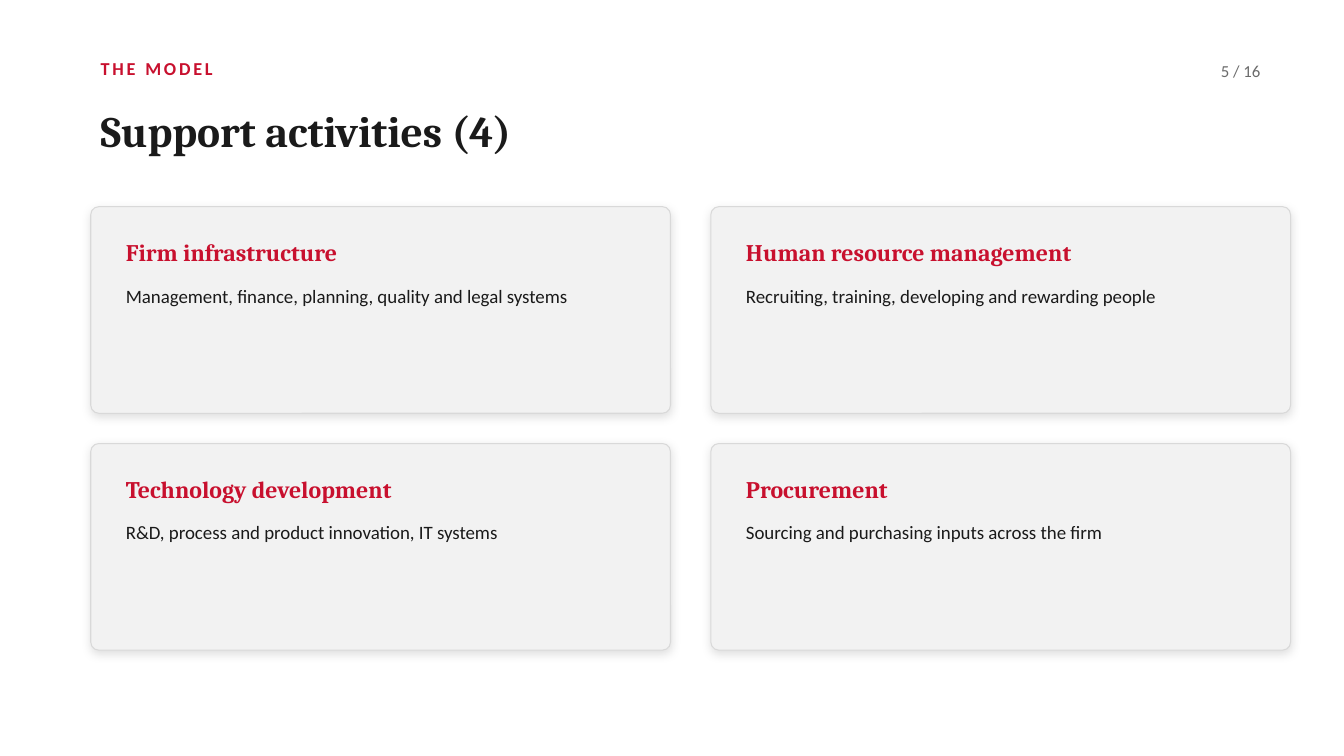
from lxml import etree
from pptx import Presentation
from pptx.dml.color import RGBColor
from pptx.enum.shapes import MSO_SHAPE
from pptx.enum.text import MSO_ANCHOR, PP_ALIGN
from pptx.oxml.ns import qn
from pptx.util import Inches, Pt

ROUNDED = MSO_SHAPE.ROUNDED_RECTANGLE
TOP, MIDDLE = MSO_ANCHOR.TOP, MSO_ANCHOR.MIDDLE
LEFT, RIGHT = PP_ALIGN.LEFT, PP_ALIGN.RIGHT

COLORS = {
    "paper": "FFFFFF",
    "accent": "C8102E",
    "ink": "1A1A1A",
    "muted": "6B6B6B",
    "card": "F2F2F2",
    "border": "D9D9D9",
    "shadow": "000000",
}
HEADING_FONT, BODY_FONT = "Cambria", "Calibri"

MARGIN, CARDS_TOP = 0.9, 2.05
CARD_WIDTH, CARD_HEIGHT = 5.75, 2.05
COLUMN_GAP, ROW_GAP = 0.4, 0.3
PADDING = 0.25

ACTIVITIES = [
    ("Firm infrastructure", "Management, finance, planning, quality and legal systems"),
    ("Human resource management", "Recruiting, training, developing and rewarding people"),
    ("Technology development", "R&D, process and product innovation, IT systems"),
    ("Procurement", "Sourcing and purchasing inputs across the firm"),
]


def rgb(name):
    return RGBColor.from_string(COLORS[name])


class SlideBuilder:
    """Holds the current slide and draws its elements in the deck style."""

    def __init__(self, slide):
        self.slide = slide
        background = slide.background.fill
        background.solid()
        background.fore_color.rgb = rgb("paper")

    def text(self, wording, left, top, width, height, size, color="ink",
             font=BODY_FONT, bold=False, anchor=MIDDLE, align=LEFT, spacing=0):
        """Add a text box; spacing is the letter spacing in points."""
        box = self.slide.shapes.add_textbox(
            Inches(left), Inches(top), Inches(width), Inches(height))
        frame = box.text_frame
        frame.word_wrap = True
        frame.vertical_anchor = anchor
        frame.text = wording
        paragraph = frame.paragraphs[0]
        paragraph.alignment = align
        run = paragraph.runs[0]
        run.font.name = font
        run.font.size = Pt(size)
        run.font.bold = bold
        run.font.color.rgb = rgb(color)
        if spacing:
            run.font._element.set("spc", str(spacing * 100))

    def panel(self, left, top, width, height):
        panel = self.slide.shapes.add_shape(
            ROUNDED, Inches(left), Inches(top), Inches(width), Inches(height))
        panel.adjustments[0] = 0.039
        panel.fill.solid()
        panel.fill.fore_color.rgb = rgb("card")
        panel.line.color.rgb = rgb("border")
        panel.line.width = Pt(0.75)
        self.soft_shadow(panel)

    def soft_shadow(self, shape):
        shape.shadow.inherit = False
        effects = shape._element.spPr.find(qn("a:effectLst"))
        shadow = etree.SubElement(
            effects, qn("a:outerShdw"), blurRad=str(Pt(7)), dist=str(Pt(2)),
            dir="5400000", algn="ctr", rotWithShape="0")
        color = etree.SubElement(shadow, qn("a:srgbClr"), val=COLORS["shadow"])
        etree.SubElement(color, qn("a:alpha"), val="12000")

    def activity_card(self, title, description, left, top):
        self.panel(left, top, CARD_WIDTH, CARD_HEIGHT)
        text_left, text_width = left + PADDING, CARD_WIDTH - 2 * PADDING
        self.text(title, text_left, top + 0.2, text_width, 0.5, 17,
                  color="accent", font=HEADING_FONT, bold=True)
        self.text(description, text_left, top + 0.72, text_width, 1.15, 13.5,
                  anchor=TOP)


def main():
    deck = Presentation()
    deck.slide_width, deck.slide_height = Inches(13.33), Inches(7.5)
    builder = SlideBuilder(deck.slides.add_slide(deck.slide_layouts[6]))

    builder.text("THE MODEL", MARGIN, 0.48, 9, 0.4, 13,
                 color="accent", bold=True, spacing=2)
    builder.text("Support activities (4)", MARGIN, 0.82, 11.5, 0.95, 31,
                 font=HEADING_FONT, bold=True)
    builder.text("5 / 16", 11.6, 0.5, 1, 0.4, 12, color="muted", align=RIGHT)

    for index, (title, description) in enumerate(ACTIVITIES):
        row, column = divmod(index, 2)
        builder.activity_card(
            title, description,
            MARGIN + column * (CARD_WIDTH + COLUMN_GAP),
            CARDS_TOP + row * (CARD_HEIGHT + ROW_GAP))

    deck.save("out.pptx")


if __name__ == "__main__":
    main()
